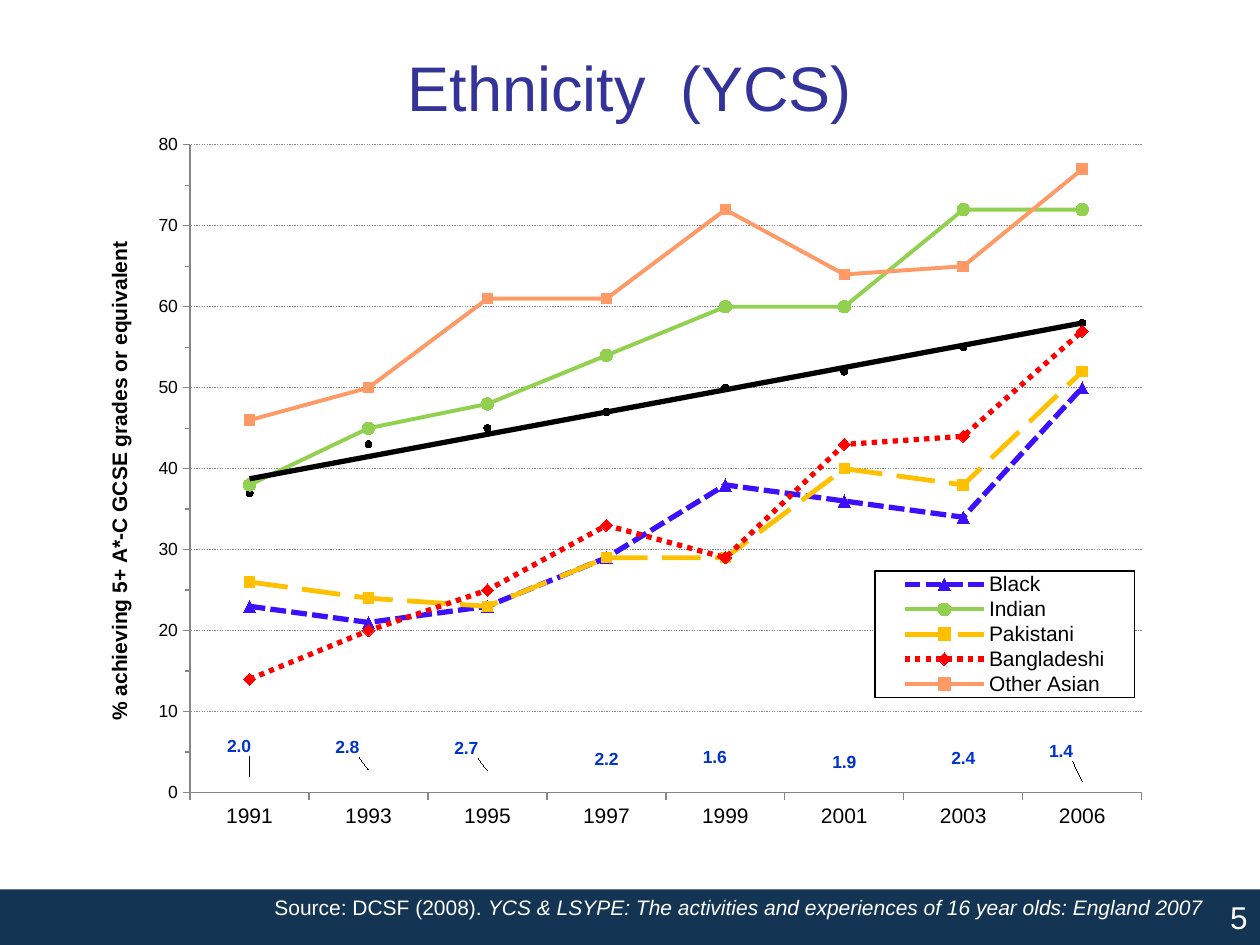
from lxml.etree import fromstring
from pptx import Presentation
from pptx.chart.data import CategoryChartData
from pptx.dml.color import RGBColor
from pptx.enum.chart import (XL_CHART_TYPE, XL_LABEL_POSITION, XL_LEGEND_POSITION,
                             XL_MARKER_STYLE, XL_TICK_MARK)
from pptx.enum.dml import MSO_LINE
from pptx.enum.shapes import MSO_SHAPE
from pptx.enum.text import MSO_ANCHOR, PP_ALIGN
from pptx.util import Inches, Pt

W, H = 10, 7.5
FONT = "Arial"
NS = ('xmlns:c="http://schemas.openxmlformats.org/drawingml/2006/chart" '
      'xmlns:a="http://schemas.openxmlformats.org/drawingml/2006/main"')
YEARS = ["1991", "1993", "1995", "1997", "1999", "2001", "2003", "2006"]
AVERAGE = [37, 43, 45, 47, 50, 52, 55, 58]
RATIOS = [2, 2.8, 2.7, 2.2, 1.6, 1.9, 2.4, 1.4]
M = XL_MARKER_STYLE
# name, values, colour, line width, dash, marker, marker size
GROUPS = [
    ("Black", [23, 21, 23, 29, 38, 36, 34, 50], "3C0FFD", 3, MSO_LINE.SQUARE_DOT, M.TRIANGLE, 7),
    ("Indian", [38, 45, 48, 54, 60, 60, 72, 72], "92D050", 2.25, None, M.CIRCLE, 7),
    ("Pakistani", [26, 24, 23, 29, 29, 40, 38, 52], "FFC000", 2.75, MSO_LINE.LONG_DASH, M.SQUARE, 6),
    ("Bangladeshi", [14, 20, 25, 33, 29, 43, 44, 57], "FF0000", 3, MSO_LINE.ROUND_DOT, M.DIAMOND, 7),
    ("Other Asian", [46, 50, 61, 61, 72, 64, 65, 77], "FF9966", 2.25, None, M.SQUARE, 6),
]
# point index: label shift as shares of the chart's size
LABEL_SHIFTS = {0: (-0.01, -0.02), 1: (-0.02, -0.01), 2: (-0.02, -0.01),
                4: (-0.01, -0.01), 7: (-0.02, -0.02)}


def rgb(color):
    return RGBColor.from_string(color)


def style(font, size, color="000000", bold=False, italic=False):
    font.name, font.size, font.bold, font.italic = FONT, Pt(size), bold, italic
    font.color.rgb = rgb(color)


def box(x, y, w, h):
    return Inches(x), Inches(y), Inches(w), Inches(h)


def write(sp, runs, size, color, align, anchor=MSO_ANCHOR.MIDDLE):
    """Fill a shape with one paragraph of (text, italic) runs."""
    tf = sp.text_frame
    tf.word_wrap = True
    tf.vertical_anchor = anchor
    p = tf.paragraphs[0]
    p.alignment = align
    for text, italic in runs:
        r = p.add_run()
        r.text = text
        style(r.font, size, color, italic=italic)


def element(xml):
    tag, rest = xml[1:].split(">", 1)
    return fromstring(f"<{tag} {NS}>{rest}")


def layout(x, y, w=None, h=None, edge=True, inner=False):
    """Manual chart layout; without edge, x and y are shifts."""
    parts = ['<c:layoutTarget val="inner"/>'] if inner else []
    if edge:
        parts += ['<c:xMode val="edge"/>', '<c:yMode val="edge"/>']
    parts += [f'<c:{k} val="{v}"/>' for k, v in zip("xywh", (x, y, w, h)) if v is not None]
    return element(f"<c:layout><c:manualLayout>{''.join(parts)}</c:manualLayout></c:layout>")


def drop_layout(parent):
    for old in parent.findall("{*}layout"):
        parent.remove(old)


def style_marker(ser, kind, size, color):
    ser.marker.style, ser.marker.size = kind, size
    ser.marker.format.fill.solid()
    ser.marker.format.fill.fore_color.rgb = rgb(color)
    ser.marker.format.line.color.rgb = rgb(color)


def style_group(ser, color, width, dash, kind, size):
    line = ser.format.line
    line.color.rgb, line.width = rgb(color), Pt(width)
    if dash:
        line.dash_style = dash
    style_marker(ser, kind, size, color)


def add_trend(ser):
    ser.format.line.fill.background()
    style_marker(ser, M.CIRCLE, 4, "000000")
    ser._element.find("{*}cat").addprevious(element(
        '<c:trendline><c:spPr><a:ln w="38100"><a:solidFill><a:srgbClr val="000000"/></a:solidFill>'
        '</a:ln></c:spPr><c:trendlineType val="linear"/><c:dispRSqr val="0"/>'
        '<c:dispEq val="0"/></c:trendline>'))


def label_ratios(ser):
    ser.format.line.fill.background()
    ser.marker.style = M.NONE
    labels = ser.data_labels
    labels.show_value = True
    labels.number_format, labels.number_format_is_linked = "#,##0.0", False
    labels.position = XL_LABEL_POSITION.ABOVE
    style(labels.font, 10, "0033CC", bold=True)
    for i in LABEL_SHIFTS:
        label = ser.points[i].data_label
        label.position = XL_LABEL_POSITION.ABOVE
        style(label.font, 10, "0033CC", bold=True)
    for lbl in ser._element.findall(".//{*}dLbl"):
        idx = lbl.find("{*}idx")
        idx.addnext(element('<c:numFmt formatCode="#,##0.0" sourceLinked="0"></c:numFmt>'))
        idx.addnext(layout(*LABEL_SHIFTS[int(idx.get("val"))], edge=False))


def style_axes(chart):
    cat, val = chart.category_axis, chart.value_axis
    for axis, size in ((cat, 12), (val, 10)):
        axis.major_tick_mark = XL_TICK_MARK.OUTSIDE
        axis.format.line.color.rgb = rgb("868686")
        style(axis.tick_labels.font, size)
    val.minor_tick_mark = XL_TICK_MARK.OUTSIDE
    val.minimum_scale, val.maximum_scale = 0, 80
    val.major_unit, val.minor_unit = 10, 5
    grid = val.major_gridlines.format.line
    grid.color.rgb, grid.width, grid.dash_style = rgb("868686"), Pt(0.75), MSO_LINE.ROUND_DOT
    tf = val.axis_title.text_frame
    tf.text = "% achieving 5+ A*-C GCSE grades or equivalent"
    style(tf.paragraphs[0].runs[0].font, 12, bold=True)


def add_legend(chart):
    chart.has_legend = True
    legend = chart.legend
    legend.position = XL_LEGEND_POSITION.RIGHT
    legend.include_in_layout = False
    style(legend.font, 12)
    el = legend._element
    drop_layout(el)
    pos = el.find("{*}legendPos")
    pos.addnext(layout(0.735, 0.602, 0.244, 0.175))
    for i in (7, 6, 0):
        pos.addnext(element(f'<c:legendEntry><c:idx val="{i}"/><c:delete val="1"/></c:legendEntry>'))
    el.find("{*}txPr").addprevious(element(
        '<c:spPr><a:solidFill><a:srgbClr val="FFFFFF"/></a:solidFill><a:ln w="9525"><a:solidFill>'
        '<a:srgbClr val="000000"/></a:solidFill></a:ln></c:spPr>'))


def add_results_chart(s):
    data = CategoryChartData()
    data.categories = YEARS
    data.add_series("Series 1", AVERAGE)
    for name, values, *_ in GROUPS:
        data.add_series(name, values)
    data.add_series("Series 7", RATIOS)
    chart = s.shapes.add_chart(XL_CHART_TYPE.LINE_MARKERS, *box(0.75, 1.07, 8.43, 5.75), data).chart
    chart.has_title = False
    style(chart.font, 10)
    plot = chart.plots[0]
    plot.vary_by_categories = False
    area = plot._element.getparent()
    drop_layout(area)
    area.insert(0, layout(0.09, 0.014, 0.896, 0.894, inner=True))
    average, *groups, ratios = plot.series
    for ser in plot.series:
        ser.smooth = False
    add_trend(average)
    for ser, (_, _, *look) in zip(groups, GROUPS):
        style_group(ser, *look)
    label_ratios(ratios)
    style_axes(chart)
    add_legend(chart)


def add_footer(s):
    bar = s.shapes.add_shape(MSO_SHAPE.RECTANGLE, *box(0, 7.06, W, H - 7.06))
    bar.shadow.inherit = False
    bar.fill.solid()
    bar.fill.fore_color.rgb = rgb("133452")
    bar.line.fill.background()
    write(bar, [("5", False)], 18, "FFFFFF", PP_ALIGN.RIGHT)


def main():
    prs = Presentation()
    prs.slide_width, prs.slide_height = Inches(W), Inches(H)
    s = prs.slides.add_slide(prs.slide_layouts[6])
    add_footer(s)
    title = s.shapes.add_textbox(*box(0.5, 0.3, 9, 0.77))
    write(title, [("Ethnicity  (YCS)", False)], 36, "333399", PP_ALIGN.CENTER)
    add_results_chart(s)
    source = s.shapes.add_textbox(*box(0.67, 7.05, 8.98, 0.3))
    write(source, [("Source: DCSF (2008). ", False),
                   ("YCS & LSYPE: The activities and experiences of 16 year olds: England 2007", True)],
          12, "FFFFFF", PP_ALIGN.RIGHT, MSO_ANCHOR.TOP)
    prs.save("out.pptx")


if __name__ == "__main__":
    main()
